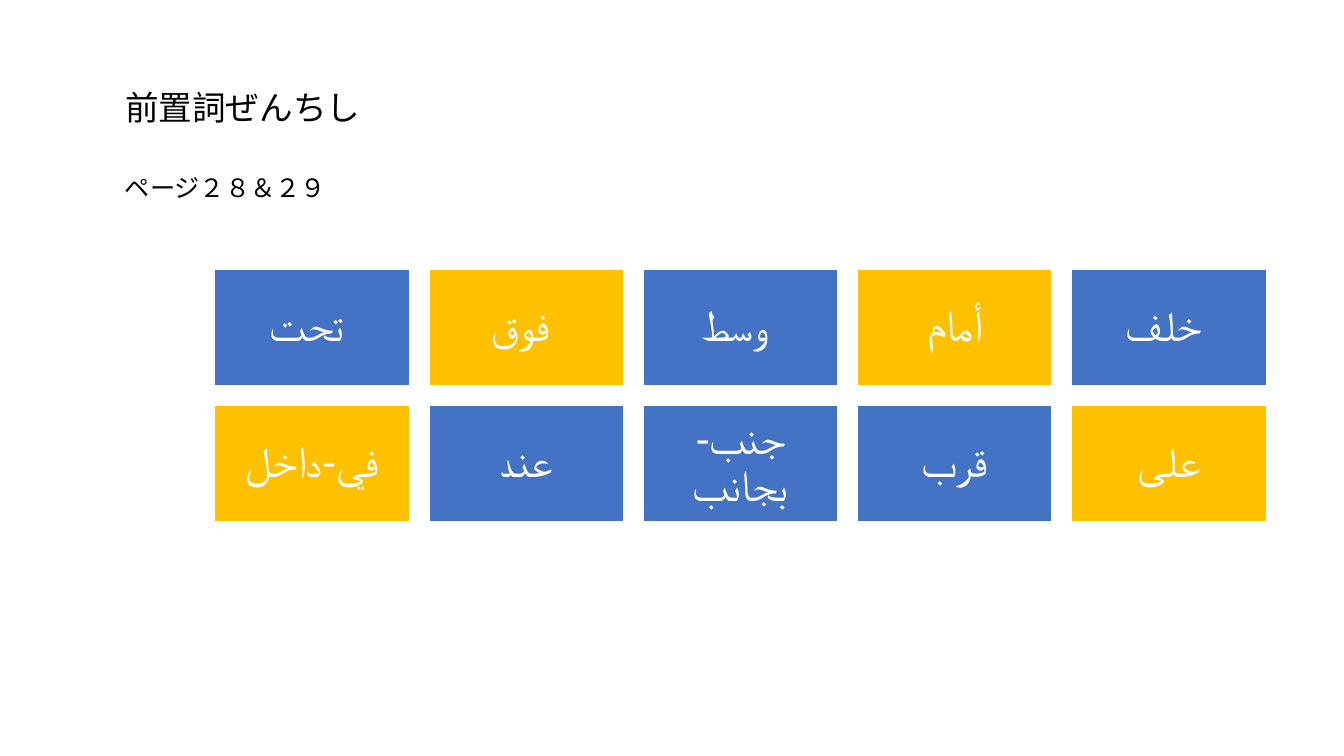
"""Build a slide of Arabic prepositions on coloured cards."""
from pptx import Presentation
from pptx.dml.color import RGBColor
from pptx.enum.shapes import MSO_SHAPE
from pptx.enum.text import MSO_ANCHOR, MSO_AUTO_SIZE, PP_ALIGN
from pptx.util import Inches, Pt

RECTANGLE = MSO_SHAPE.RECTANGLE
TOP, MIDDLE = MSO_ANCHOR.TOP, MSO_ANCHOR.MIDDLE
GROW = MSO_AUTO_SIZE.SHAPE_TO_FIT_TEXT
LEFT, CENTER = PP_ALIGN.LEFT, PP_ALIGN.CENTER

BLACK = RGBColor(0x00, 0x00, 0x00)
WHITE = RGBColor(0xFF, 0xFF, 0xFF)
BLUE = RGBColor(0x44, 0x72, 0xC4)
GOLD = RGBColor(0xFF, 0xC0, 0x00)

FONT = "Calibri"
TITLE_ONLY = 5
CARD_WIDTH, CARD_HEIGHT = 1.93, 1.16
FIRST_LEFT, LAST_LEFT = 2.13, 10.63
FIRST_TOP, ROW_STEP = 2.67, 1.35
CARD_MARGIN = 0.13

CARD_ROWS = [
    [("تحت ", BLUE), ("فوق ", GOLD), ("وسط ", BLUE), ("أمام", GOLD), ("خلف ", BLUE)],
    [("في-داخل", GOLD), ("عند", BLUE), ("جنب-بجانب", BLUE), ("قرب", BLUE), ("على", GOLD)],
]


def add_span(para, text, size, color):
    """Add one formatted run to a paragraph."""
    span = para.add_run()
    span.text = text
    span.font.name = FONT
    span.font.size = Pt(size)
    span.font.color.rgb = color


def fill_heading(box, text, size, left, top, width, height):
    """Place a heading box and write its single line."""
    box.left, box.top = Inches(left), Inches(top)
    box.width, box.height = Inches(width), Inches(height)
    frame = box.text_frame
    frame.word_wrap = True
    frame.auto_size = GROW
    frame.vertical_anchor = TOP
    para = frame.paragraphs[0]
    para.alignment = LEFT
    add_span(para, text, size, BLACK)


def add_card(page, word, color, left, top):
    """Add one coloured card with a centred word."""
    card = page.shapes.add_shape(
        RECTANGLE, Inches(left), Inches(top), Inches(CARD_WIDTH), Inches(CARD_HEIGHT)
    )
    card.shadow.inherit = False
    card.fill.solid()
    card.fill.fore_color.rgb = color
    card.line.color.rgb = WHITE
    card.line.width = Pt(1)
    frame = card.text_frame
    frame.word_wrap = True
    frame.vertical_anchor = MIDDLE
    frame.margin_left = frame.margin_right = Inches(CARD_MARGIN)
    frame.margin_top = frame.margin_bottom = Inches(CARD_MARGIN)
    para = frame.paragraphs[0]
    para.alignment = CENTER
    para.line_spacing = 0.9
    add_span(para, word, 31, WHITE)


def add_card_grid(page):
    """Lay the cards out in evenly spaced rows and columns."""
    for row, cards in enumerate(CARD_ROWS):
        column_step = (LAST_LEFT - FIRST_LEFT) / (len(cards) - 1)
        for column, (word, color) in enumerate(cards):
            left = FIRST_LEFT + column * column_step
            add_card(page, word, color, left, FIRST_TOP + row * ROW_STEP)


def main():
    """Create the deck and save it."""
    deck = Presentation()
    deck.slide_width, deck.slide_height = Inches(13.33), Inches(7.5)
    page = deck.slides.add_slide(deck.slide_layouts[TITLE_ONLY])
    fill_heading(page.shapes.title, "前置詞ぜんちし", 24, 1.14, 0.81, 9.84, 0.5)
    page_note = page.shapes.add_textbox(0, 0, 0, 0)
    fill_heading(page_note, "ページ２８＆２９", 18, 1.14, 1.66, 8.88, 0.4)
    add_card_grid(page)
    deck.save("out.pptx")


if __name__ == "__main__":
    main()
